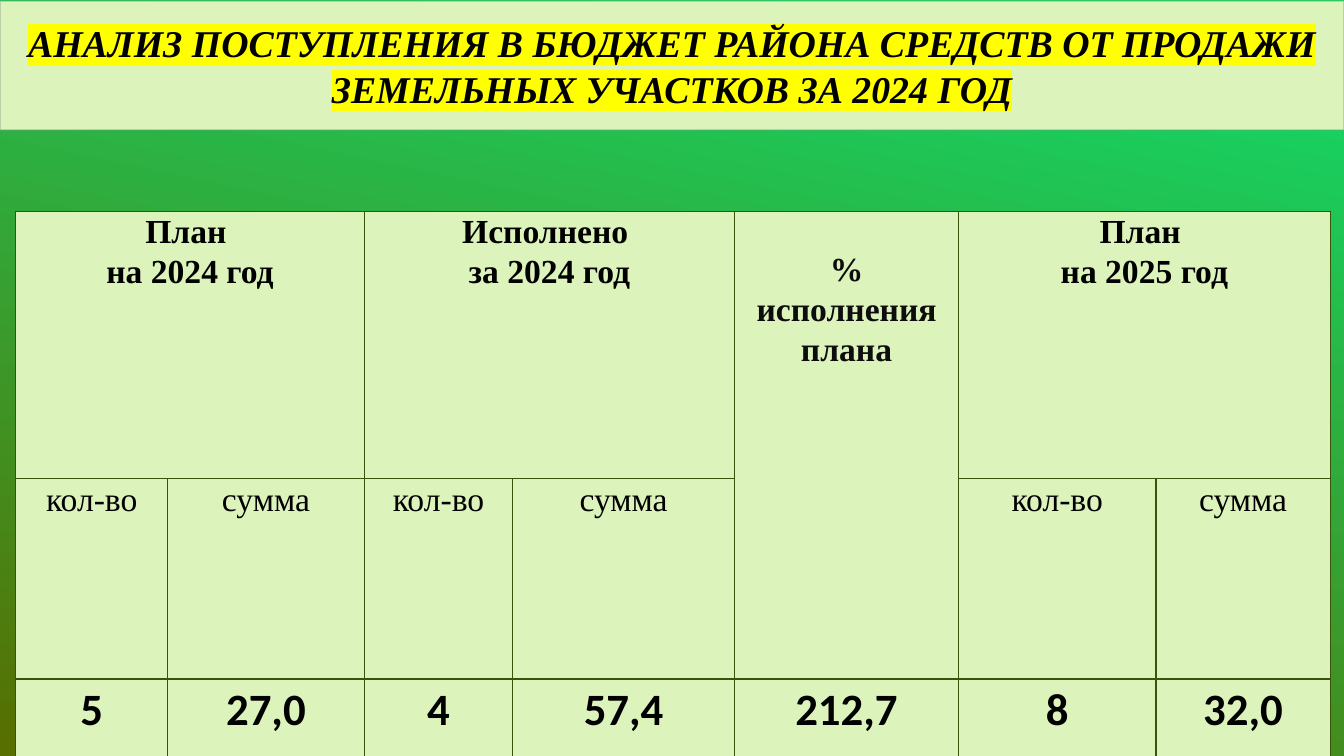
from dataclasses import dataclass

from lxml import etree
from pptx import Presentation
from pptx.dml.color import RGBColor
from pptx.enum import text
from pptx.oxml import ns
from pptx.util import Pt


@dataclass(frozen=True)
class Theme:
    panel: str = "DDF3BC"
    ink: str = "000000"
    soft_ink: str = "0D0D0D"
    title_line: str = "909789"
    grid: str = "38540A"
    highlight: str = "FFFF00"
    bg_start: str = "17D262"
    bg_end: str = "576E00"
    serif: str = "Times New Roman"
    sans: str = "Calibri"
    title_size: int = 27
    label_size: int = 24
    value_size: int = 32


THEME = Theme()
COLUMNS = [108.5, 140.5, 106, 158.5, 160, 141, 124.5]
ROWS = [191, 143, 94]
PERCENT_COLUMN = 4
# first column of each two-column group: heading lines
GROUPS = {
    0: ["План ", "на 2024 год"],
    2: ["Исполнено ", "за 2024 год"],
    5: ["План ", "на 2025 год"],
}
VALUES = ["5", "27,0", "4", "57,4", "212,7", "8", "32,0"]


def rgb(value):
    return RGBColor.from_string(value)


def set_font(font, name, size, color, bold=True, italic=False):
    font.name, font.size = name, Pt(size)
    font.bold, font.italic = bold, italic
    font.color.rgb = rgb(color)


def set_background(slide):
    fill = slide.background.fill
    fill.gradient()
    fill.gradient_angle = 258
    stops = zip(fill.gradient_stops, (0.1, 1), (THEME.bg_start, THEME.bg_end))
    for stop, position, color in stops:
        stop.position = position
        stop.color.rgb = rgb(color)


def highlight(r, color):
    """Put a marker colour behind a run, right after its text fill."""
    mark = etree.Element(ns.qn("a:highlight"))
    etree.SubElement(mark, ns.qn("a:srgbClr"), val=color)
    r.font._element.find(ns.qn("a:solidFill")).addnext(mark)


def add_title(slide, words):
    sp = slide.shapes.title
    sp.left, sp.top, sp.width, sp.height = Pt(0), Pt(0.75), Pt(960), Pt(92)
    sp.fill.solid()
    sp.fill.fore_color.rgb = rgb(THEME.panel)
    sp.line.width = Pt(0.75)
    sp.line.color.rgb = rgb(THEME.title_line)
    line_color = sp.line._ln.find(".//" + ns.qn("a:srgbClr"))
    etree.SubElement(line_color, ns.qn("a:alpha"), val="60000")
    tf = sp.text_frame
    tf.word_wrap = True
    tf.auto_size = text.MSO_AUTO_SIZE.NONE
    tf.vertical_anchor = text.MSO_ANCHOR.MIDDLE
    p = tf.paragraphs[0]
    p.alignment = text.PP_ALIGN.CENTER
    r = p.add_run()
    r.text = words
    set_font(r.font, THEME.serif, THEME.title_size, THEME.ink, italic=True)
    highlight(r, THEME.highlight)


def style_cell(cell):
    """Give a cell its panel fill, thin grid lines and tight margins."""
    cell.fill.solid()
    cell.fill.fore_color.rgb = rgb(THEME.panel)
    cell.margin_left = cell.margin_right = Pt(5)
    cell.margin_top = cell.margin_bottom = Pt(0)
    tc_pr = cell._tc.get_or_add_tcPr()
    for i, side in enumerate(("lnL", "lnR", "lnT", "lnB")):
        ln = etree.Element(ns.qn("a:" + side), w=str(Pt(1)))
        fill = etree.SubElement(ln, ns.qn("a:solidFill"))
        etree.SubElement(fill, ns.qn("a:srgbClr"), val=THEME.grid)
        tc_pr.insert(i, ln)


def write_cell(cell, lines, name=THEME.serif, size=THEME.label_size,
               color=THEME.ink, bold=True):
    tf = cell.text_frame
    for i, line in enumerate(lines):
        p = tf.add_paragraph() if i else tf.paragraphs[0]
        p.text = line
        p.alignment = text.PP_ALIGN.CENTER
        p.line_spacing = 1.07
        set_font(p.font, name, size, color, bold)


def add_sales_table(slide):
    table = slide.shapes.add_table(
        len(ROWS), len(COLUMNS), Pt(11.25), Pt(151),
        Pt(sum(COLUMNS)), Pt(sum(ROWS))).table
    table.first_row = table.horz_banding = False
    for column, width in zip(table.columns, COLUMNS):
        column.width = Pt(width)
    for row, height in zip(table.rows, ROWS):
        row.height = Pt(height)
    for cell in table.iter_cells():
        style_cell(cell)

    for c, heading in GROUPS.items():
        table.cell(0, c).merge(table.cell(0, c + 1))
        write_cell(table.cell(0, c), heading)
        for offset, label in enumerate(("кол-во", "сумма")):
            write_cell(table.cell(1, c + offset), [label], bold=False)

    percent = table.cell(0, PERCENT_COLUMN)
    percent.merge(table.cell(1, PERCENT_COLUMN))
    percent.margin_top = Pt(27)
    write_cell(percent, ["% исполнения плана"], color=THEME.soft_ink)

    for c, value in enumerate(VALUES):
        write_cell(table.cell(2, c), [value], THEME.sans, THEME.value_size)


def main():
    prs = Presentation()
    prs.slide_width, prs.slide_height = Pt(960), Pt(540)
    slide = prs.slides.add_slide(prs.slide_layouts[5])
    set_background(slide)
    add_title(slide, "АНАЛИЗ ПОСТУПЛЕНИЯ В БЮДЖЕТ РАЙОНА СРЕДСТВ ОТ ПРОДАЖИ "
                     "ЗЕМЕЛЬНЫХ УЧАСТКОВ ЗА 2024 ГОД")
    add_sales_table(slide)
    prs.save("out.pptx")


if __name__ == "__main__":
    main()
